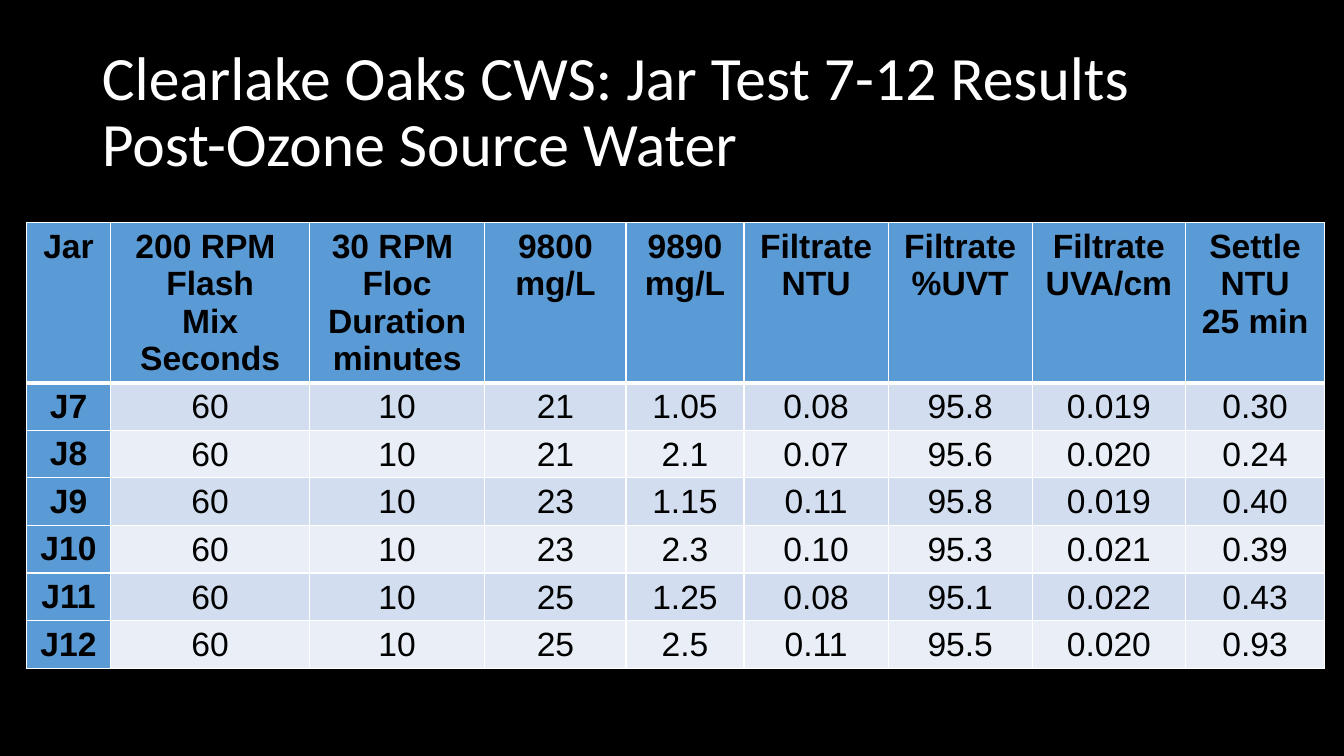
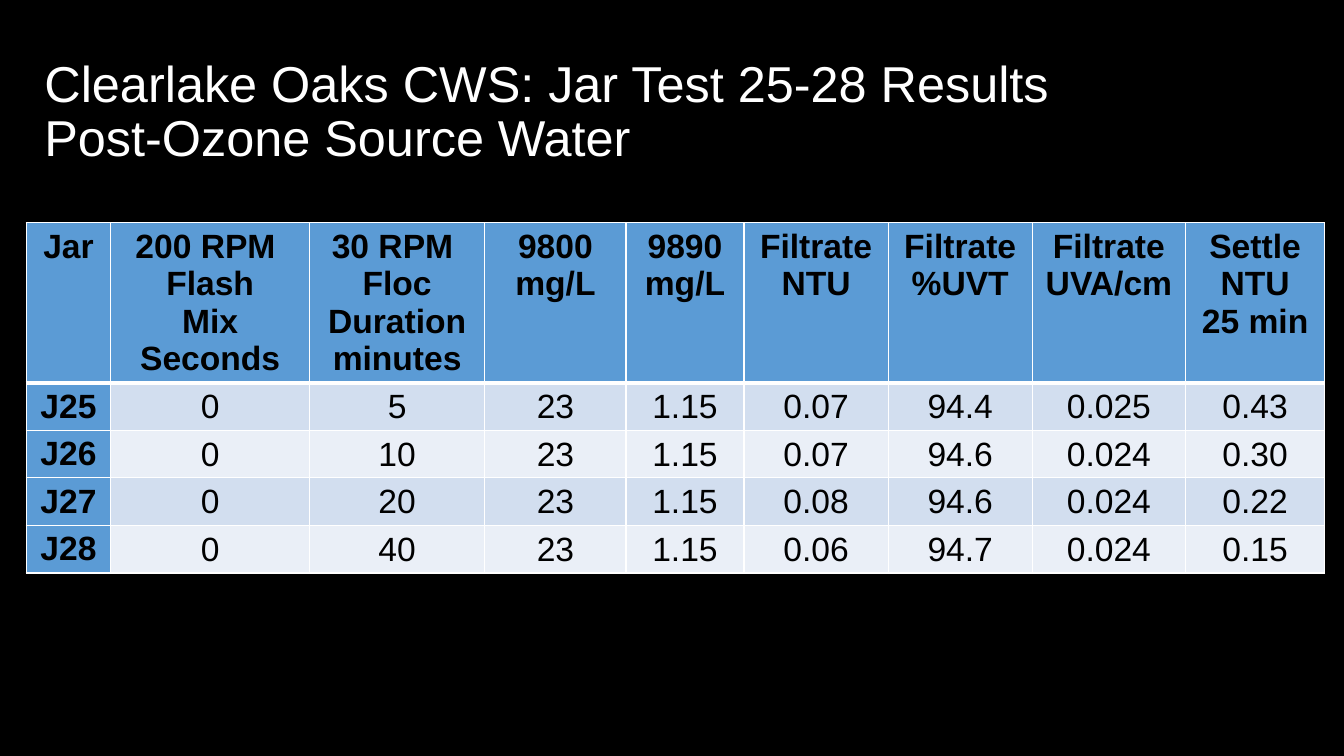
"""Builds two slides of jar test results for post-ozone source water."""
import dataclasses

import lxml.etree
import pptx
import pptx.dml.color
import pptx.enum.text
import pptx.oxml.ns
import pptx.util

Inches = pptx.util.Inches
Pt = pptx.util.Pt
RGBColor = pptx.dml.color.RGBColor


@dataclasses.dataclass(frozen=True)
class Theme:
    background: str = "000000"
    title_color: str = "FFFFFF"
    table_text: str = "000000"
    heading_fill: str = "5B9BD5"
    band_fills: tuple = ("D2DEEF", "EAEFF7")
    border: str = "FFFFFF"
    border_width: float = 1
    header_border_width: float = 3
    table_font: str = "Arial"
    table_size: float = 24


THEME = Theme()
TITLE_TOP, TITLE_HEIGHT = 0.4, 1.45
TABLE_LEFT, TABLE_TOP = 0.26, 2.21
COLUMN_WIDTHS = (0.84, 1.97, 1.74, 1.4, 1.17, 1.43, 1.43, 1.52, 1.38)
HEADER_HEIGHT, ROW_HEIGHT = 1.58, 0.47
HEADING_MARGINS = (0.1, 0.05, 0.1, 0.05)
VALUE_MARGINS = (0.01, 0.01, 0.01, 0)

HEADINGS = (
    "Jar", "200 RPM \nFlash\nMix\nSeconds", "30 RPM \nFloc\nDuration\nminutes",
    "9800\nmg/L", "9890\nmg/L", "Filtrate\nNTU", "Filtrate\n%UVT",
    "Filtrate\nUVA/cm", "Settle\nNTU\n25 min",
)
JARS_7_TO_12 = (
    ("J7", "60", "10", "21", "1.05", "0.08", "95.8", "0.019", "0.30"),
    ("J8", "60", "10", "21", "2.1", "0.07", "95.6", "0.020", "0.24"),
    ("J9", "60", "10", "23", "1.15", "0.11", "95.8", "0.019", "0.40"),
    ("J10", "60", "10", "23", "2.3", "0.10", "95.3", "0.021", "0.39"),
    ("J11", "60", "10", "25", "1.25", "0.08", "95.1", "0.022", "0.43"),
    ("J12", "60", "10", "25", "2.5", "0.11", "95.5", "0.020", "0.93"),
)
JARS_25_TO_28 = (
    ("J25", "0", "5", "23", "1.15", "0.07", "94.4", "0.025", "0.43"),
    ("J26", "0", "10", "23", "1.15", "0.07", "94.6", "0.024", "0.30"),
    ("J27", "0", "20", "23", "1.15", "0.08", "94.6", "0.024", "0.22"),
    ("J28", "0", "40", "23", "1.15", "0.06", "94.7", "0.024", "0.15"),
)


def set_fill(fill, color):
    fill.solid()
    fill.fore_color.rgb = RGBColor.from_string(color)


def format_paragraph(paragraph, font_name, size, color, alignment, bold=False):
    paragraph.alignment = alignment
    font = paragraph.font
    font.name = font_name
    font.size = Pt(size)
    font.bold = bold
    font.color.rgb = RGBColor.from_string(color)


def set_title(slide, text, left, width, font_name, size):
    title = slide.shapes.title
    title.left, title.top = Inches(left), Inches(TITLE_TOP)
    title.width, title.height = Inches(width), Inches(TITLE_HEIGHT)
    frame = title.text_frame
    frame.text = text
    frame.word_wrap = True
    frame.auto_size = pptx.enum.text.MSO_AUTO_SIZE.NONE
    frame.vertical_anchor = pptx.enum.text.MSO_ANCHOR.MIDDLE
    paragraph = frame.paragraphs[0]
    paragraph.line_spacing = 0.9
    format_paragraph(paragraph, font_name, size, THEME.title_color,
                     pptx.enum.text.PP_ALIGN.LEFT)


def set_borders(cell, row_index):
    thin, thick = THEME.border_width, THEME.header_border_width
    widths = {
        "a:lnL": thin,
        "a:lnR": thin,
        "a:lnT": thick if row_index == 1 else thin,
        "a:lnB": thick if row_index == 0 else thin,
    }
    qualified = pptx.oxml.ns.qn
    properties = cell._tc.get_or_add_tcPr()
    for position, (tag, width) in enumerate(widths.items()):
        line = lxml.etree.Element(qualified(tag), w=str(Pt(width)))
        fill = lxml.etree.SubElement(line, qualified("a:solidFill"))
        lxml.etree.SubElement(fill, qualified("a:srgbClr"), val=THEME.border)
        properties.insert(position, line)


def fill_cell(cell, text, row_index, column_index):
    is_heading = row_index == 0 or column_index == 0
    cell.text = text
    margins = HEADING_MARGINS if is_heading else VALUE_MARGINS
    (cell.margin_left, cell.margin_top,
     cell.margin_right, cell.margin_bottom) = map(Inches, margins)
    anchors = pptx.enum.text.MSO_ANCHOR
    cell.vertical_anchor = anchors.TOP if is_heading else anchors.MIDDLE
    band = THEME.band_fills[(row_index - 1) % len(THEME.band_fills)]
    set_fill(cell.fill, THEME.heading_fill if is_heading else band)
    set_borders(cell, row_index)
    for paragraph in cell.text_frame.paragraphs:
        format_paragraph(paragraph, THEME.table_font, THEME.table_size,
                         THEME.table_text, pptx.enum.text.PP_ALIGN.CENTER,
                         is_heading)


def add_results_table(slide, jars):
    rows = (HEADINGS, *jars)
    height = HEADER_HEIGHT + ROW_HEIGHT * len(jars)
    table = slide.shapes.add_table(
        len(rows), len(HEADINGS), Inches(TABLE_LEFT), Inches(TABLE_TOP),
        Inches(sum(COLUMN_WIDTHS)), Inches(height)).table
    table.first_row = table.horz_banding = False
    for column, width in zip(table.columns, COLUMN_WIDTHS):
        column.width = Inches(width)
    for row_index, values in enumerate(rows):
        row = table.rows[row_index]
        row.height = Inches(ROW_HEIGHT if row_index else HEADER_HEIGHT)
        for column_index, text in enumerate(values):
            fill_cell(row.cells[column_index], text, row_index, column_index)


def add_results_slide(presentation, jar_range, jars, left, width, font_name, size):
    slide = presentation.slides.add_slide(
        presentation.slide_layouts.get_by_name("Title Only"))
    title = (f"Clearlake Oaks CWS: Jar Test {jar_range} Results"
             "\vPost-Ozone Source Water")
    set_title(slide, title, left, width, font_name, size)
    add_results_table(slide, jars)


def main():
    presentation = pptx.Presentation()
    presentation.slide_width = Inches(13.33)
    presentation.slide_height = Inches(7.5)
    set_fill(presentation.slide_master.background.fill, THEME.background)
    add_results_slide(presentation, "7-12", JARS_7_TO_12, 0.91, 11.51, "Calibri", 44)
    add_results_slide(presentation, "25-28", JARS_25_TO_28, 0.34, 12.7, "Arial", 36)
    presentation.save("out.pptx")


if __name__ == "__main__":
    main()
